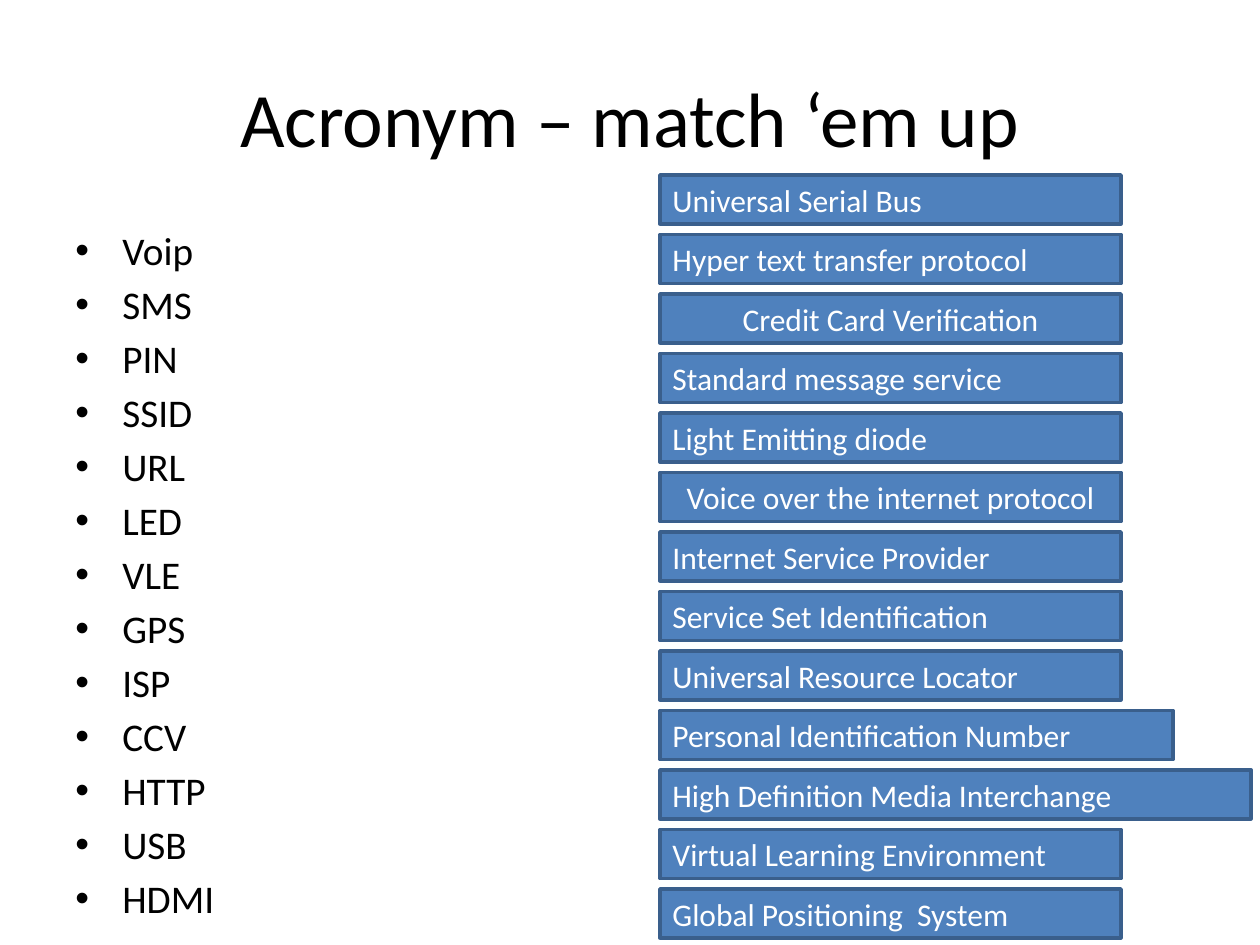
from lxml.etree import SubElement
from pptx import Presentation
from pptx.dml.color import RGBColor
from pptx.enum.shapes import MSO_SHAPE
from pptx.enum.text import MSO_ANCHOR, PP_ALIGN
from pptx.oxml.ns import qn
from pptx.util import Pt

TITLE = "Acronym – match ‘em up"
TERMS = ["Voip", "SMS", "PIN", "SSID", "URL", "LED", "VLE", "GPS", "ISP",
         "CCV", "HTTP", "USB", "HDMI"]
WIDE = 461
LEFT, MID = PP_ALIGN.LEFT, PP_ALIGN.CENTER
BARS = [
    ("Universal Serial Bus", WIDE, LEFT),
    ("Hyper text transfer protocol", WIDE, LEFT),
    ("Credit Card Verification", WIDE, MID),
    ("Standard message service", WIDE, LEFT),
    ("Light Emitting diode", WIDE, LEFT),
    ("Voice over the internet protocol", WIDE, MID),
    ("Internet Service Provider", WIDE, LEFT),
    ("Service Set Identification", WIDE, LEFT),
    ("Universal Resource Locator", WIDE, LEFT),
    ("Personal Identification Number", 513, LEFT),
    ("High Definition Media Interchange", 591, LEFT),
    ("Virtual Learning Environment", WIDE, LEFT),
    ("Global Positioning  System", WIDE, LEFT),
]
INK = {"text": "000000", "bar": "4F81BD", "edge": "3A5F8C", "label": "FFFFFF"}
FIRST, LAST = 175, 889


def px(n):
    return round(n * 914400 / 126)


def hue(name):
    return RGBColor.from_string(INK[name])


def style(para, text, size, ink, align):
    para.text = text
    para.alignment = align
    para.font.name = "Calibri"
    para.font.size = Pt(size)
    para.font.color.rgb = hue(ink)


def add_text(slide, x, y, w, h, anchor):
    frame = slide.shapes.add_textbox(px(x), px(y), px(w), px(h)).text_frame
    frame.word_wrap = True
    frame.vertical_anchor = anchor
    return frame


def add_bullet(para):
    props = para._p.get_or_add_pPr()
    props.set("marL", str(px(47)))
    props.set("indent", str(-px(47)))
    SubElement(props, qn("a:buFont"), typeface="Arial")
    SubElement(props, qn("a:buChar"), char="•")


def add_bar(slide, y, text, wide, align):
    bar = slide.shapes.add_shape(
        MSO_SHAPE.RECTANGLE, px(660), px(y), px(wide), px(49))
    bar.shadow.inherit = False
    bar.fill.solid()
    bar.fill.fore_color.rgb = hue("bar")
    bar.line.color.rgb = hue("edge")
    bar.line.width = Pt(2)
    frame = bar.text_frame
    frame.word_wrap = True
    frame.vertical_anchor = MSO_ANCHOR.MIDDLE
    style(frame.paragraphs[0], text, 18, "label", align)


def main():
    deck = Presentation()
    deck.slide_width, deck.slide_height = px(1260), px(945)
    slide = deck.slides.add_slide(deck.slide_layouts[6])

    head = add_text(slide, 63, 38, 1134, 158, MSO_ANCHOR.MIDDLE)
    style(head.paragraphs[0], TITLE, 44, "text", MID)

    body = add_text(slide, 63, 220, 567, 624, MSO_ANCHOR.TOP)
    for i, term in enumerate(TERMS):
        para = body.add_paragraph() if i else body.paragraphs[0]
        style(para, term, 22.4, "text", LEFT)
        para.space_before = Pt(4)
        add_bullet(para)

    step = (LAST - FIRST) / (len(BARS) - 1)
    for i, bar in enumerate(BARS):
        add_bar(slide, FIRST + i * step, *bar)

    deck.save("out.pptx")


if __name__ == "__main__":
    main()
